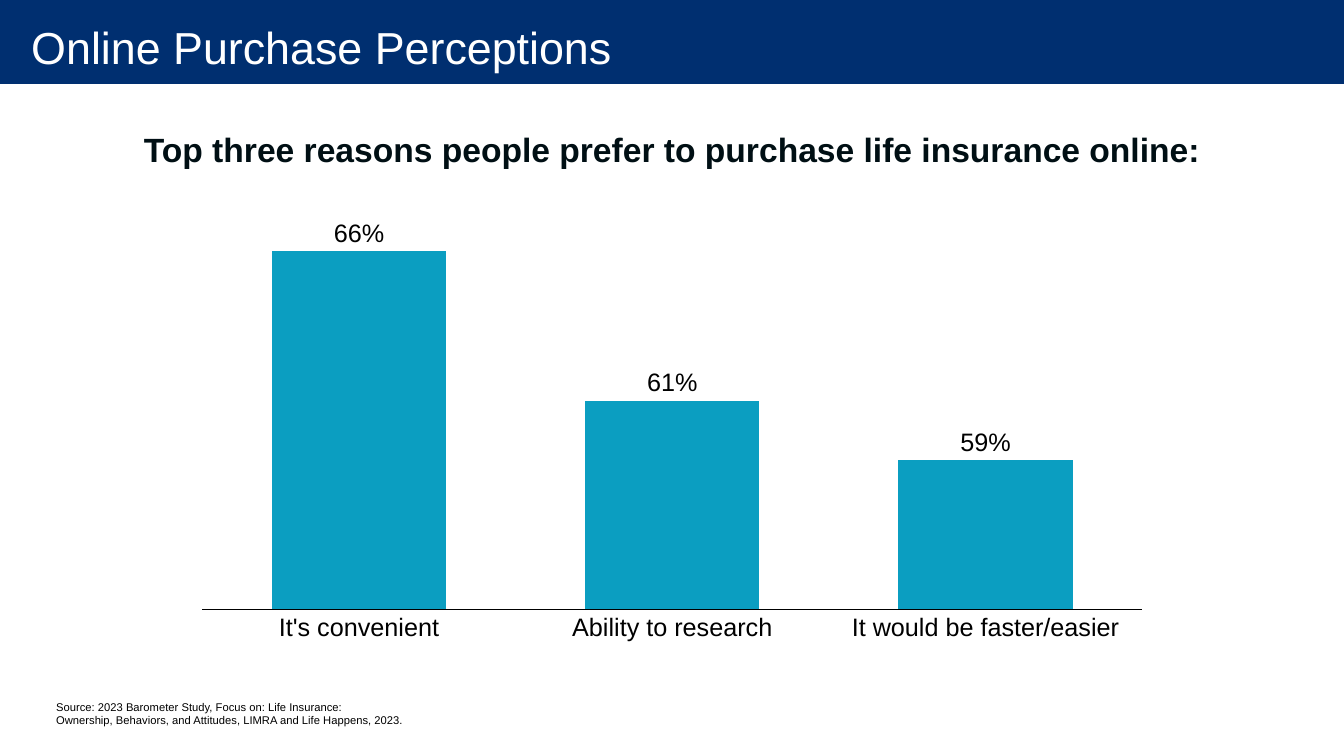
from lxml import etree
from pptx import Presentation
from pptx.chart.data import CategoryChartData
from pptx.dml.color import RGBColor
from pptx.enum.chart import XL_CHART_TYPE, XL_LABEL_POSITION, XL_TICK_MARK
from pptx.enum.shapes import MSO_SHAPE
from pptx.enum.text import MSO_ANCHOR, PP_ALIGN
from pptx.oxml.ns import qn
from pptx.util import Pt

COLUMNS = XL_CHART_TYPE.COLUMN_CLUSTERED
OUTSIDE_END = XL_LABEL_POSITION.OUTSIDE_END
NO_TICK = XL_TICK_MARK.NONE
RECTANGLE = MSO_SHAPE.RECTANGLE
MIDDLE, BOTTOM = MSO_ANCHOR.MIDDLE, MSO_ANCHOR.BOTTOM
LEFT, CENTER = PP_ALIGN.LEFT, PP_ALIGN.CENTER

FONT = "Arial"
NAVY, TEAL, INK, BLACK, WHITE = "002F70", "0B9EC1", "000F14", "000000", "FFFFFF"
REASONS = {
    "It's convenient": 0.66,
    "Ability to research": 0.61,
    "It would be faster/easier": 0.59,
}
PLOT_LAYOUT = {
    "layoutTarget": "inner", "xMode": "edge", "yMode": "edge",
    "x": 0.041, "y": 0.115, "w": 0.893, "h": 0.791,
}


def color(hex_string):
    """Return the colour for a hex string."""
    return RGBColor.from_string(hex_string)


def apply_format(target, values):
    """Set each attribute in values on the target."""
    for name, value in values.items():
        setattr(target, name, value)


def style_font(font, size, hex_string, bold=False):
    """Give a font its face, size, weight and colour."""
    apply_format(font, {"name": FONT, "size": Pt(size), "bold": bold})
    font.color.rgb = color(hex_string)


def add_text(slide, box, text, size, hex_string, anchor=MIDDLE, align=LEFT,
             bold=False, frame_format=None, line_spacing=None):
    """Add one paragraph of text in the given box."""
    frame = slide.shapes.add_textbox(*map(Pt, box)).text_frame
    apply_format(frame, {"word_wrap": True, "vertical_anchor": anchor, **(frame_format or {})})
    paragraph = frame.paragraphs[0]
    paragraph.text = text
    apply_format(paragraph, {"alignment": align, "line_spacing": line_spacing})
    style_font(paragraph.font, size, hex_string, bold)


def add_title_band(slide, box, title):
    """Add the navy band with the slide title inside it."""
    left, top, width, height = box
    band = slide.shapes.add_shape(RECTANGLE, *map(Pt, box))
    band.shadow.inherit = False
    band.fill.solid()
    band.fill.fore_color.rgb = color(NAVY)
    band.line.fill.background()
    insets = {"margin_left": Pt(21.6), "margin_right": Pt(14.4),
              "margin_top": 0, "margin_bottom": 0}
    add_text(slide, (left + 0.72, top, width, height + 8), title, 32, WHITE,
             frame_format=insets)


def set_plot_layout(chart):
    """Fix the inner plot area as fractions of the chart."""
    plot_area = chart.plots[0]._element.getparent()
    for old_layout in plot_area.findall(qn("c:layout")):
        plot_area.remove(old_layout)
    layout = etree.Element(qn("c:layout"))
    manual = etree.SubElement(layout, qn("c:manualLayout"))
    for name, value in PLOT_LAYOUT.items():
        etree.SubElement(manual, qn(f"c:{name}")).set("val", str(value))
    plot_area.insert(0, layout)


def add_reasons_chart(slide, box, reasons):
    """Add the column chart of reasons in the given box."""
    data = CategoryChartData(number_format="0%")
    data.categories = list(reasons)
    data.add_series("Series 1", list(reasons.values()))
    chart = slide.shapes.add_chart(COLUMNS, *map(Pt, box), data).chart
    apply_format(chart, {"has_legend": False, "has_title": False})
    style_font(chart.font, 10, BLACK)
    set_plot_layout(chart)

    plot = chart.plots[0]
    apply_format(plot, {"gap_width": 80, "overlap": -42,
                        "vary_by_categories": False, "has_data_labels": True})
    labels = plot.data_labels
    apply_format(labels, {"show_value": True, "position": OUTSIDE_END,
                          "number_format": "0%", "number_format_is_linked": False})
    style_font(labels.font, 18, BLACK)
    fill = plot.series[0].format.fill
    fill.solid()
    fill.fore_color.rgb = color(TEAL)

    apply_format(chart.value_axis, {"visible": False, "has_major_gridlines": False,
                                    "minimum_scale": 0.54, "maximum_scale": 0.68})
    axis = chart.category_axis
    apply_format(axis, {"major_tick_mark": NO_TICK, "minor_tick_mark": NO_TICK})
    style_font(axis.tick_labels.font, 18, BLACK)
    axis.format.line.width = Pt(0.75)
    axis.format.line.color.rgb = color(BLACK)


def main():
    """Build the slide and save it."""
    presentation = Presentation()
    apply_format(presentation, {"slide_width": Pt(960), "slide_height": Pt(540)})
    slide = presentation.slides.add_slide(presentation.slide_layouts[6])
    add_title_band(slide, (0, -2, 960, 62), "Online Purchase Perceptions")
    add_text(slide, (33, 471, 421, 52),
             "Source: 2023 Barometer Study, Focus on: Life Insurance:\v"
             "Ownership, Behaviors, and Attitudes, LIMRA and Life Happens, 2023.",
             8, BLACK, anchor=BOTTOM)
    add_text(slide, (66, 78, 828, 61),
             "Top three reasons people prefer to purchase life insurance online:",
             24, INK, align=CENTER, bold=True, line_spacing=0.9)
    add_reasons_chart(slide, (113.8, 93.6, 751.7, 377.3), REASONS)
    presentation.save("out.pptx")


if __name__ == "__main__":
    main()
